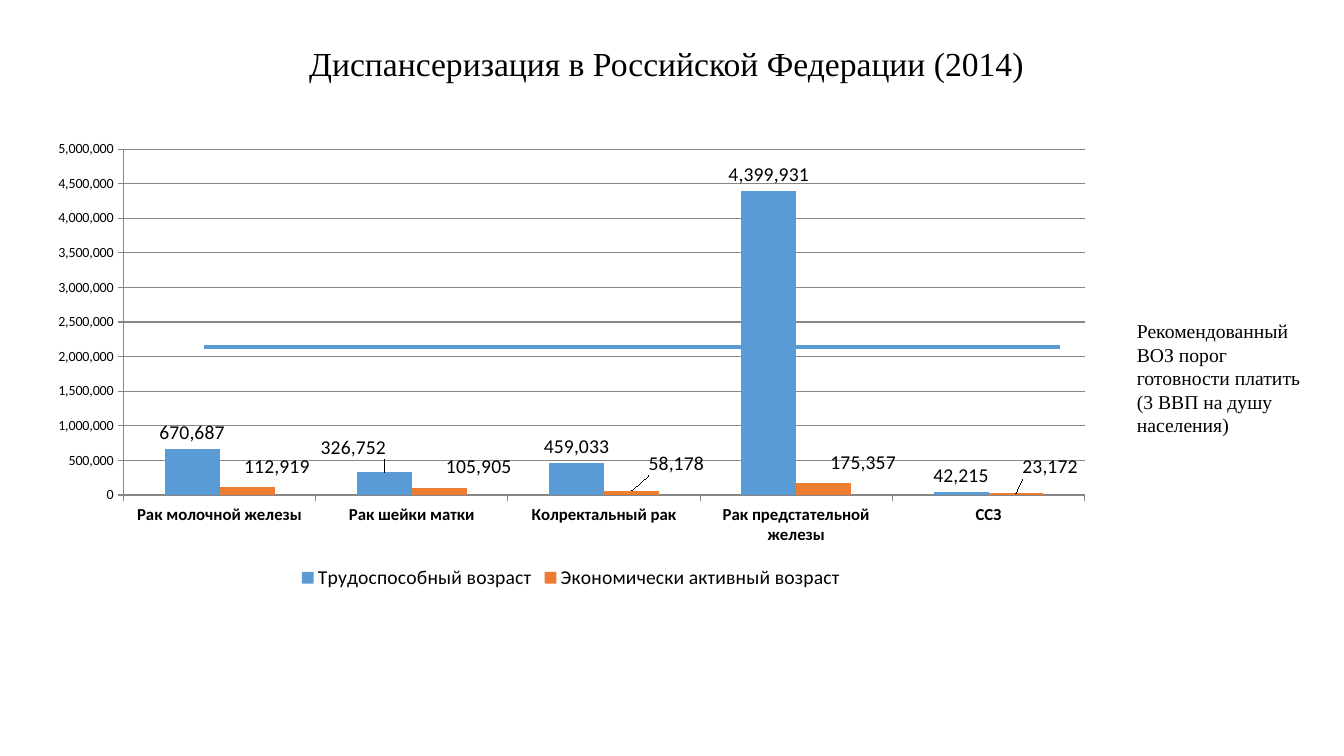
import pptx
import pptx.chart.data
import pptx.dml.color
import pptx.enum.chart
import pptx.enum.shapes
import pptx.enum.text
import pptx.oxml
import pptx.oxml.ns
import pptx.util
import lxml.etree

EMU_PER_PX = 914400 / 100.8
CHART_BOX = (37, 132, 1068, 462)
PLOT_BOX = (86, 17, 961, 346)
NUMBER_FORMAT = "#,##0"
CATEGORIES = [
    "Рак молочной железы",
    "Рак шейки матки",
    "Колректальный рак",
    "Рак предстательной железы",
    "ССЗ",
]
SERIES = [
    {
        "name": "Трудоспособный возраст",
        "values": [670687, 326752, 459033, 4399931, 42215],
        "color": "5B9BD5",
        "label_shifts": {1: (-31, -9)},
    },
    {
        "name": "Экономически активный возраст",
        "values": [112919, 105905, 58178, 175357, 23172],
        "color": "ED7D31",
        "label_shifts": {
            0: (30, -4), 1: (39, -5), 2: (45, -11), 3: (40, -4), 4: (34, -10),
        },
    },
]


def px(length):
    return pptx.util.Emu(round(length * EMU_PER_PX))


def color(hex_string):
    return pptx.dml.color.RGBColor.from_string(hex_string)


def set_attributes(target, values):
    for name, value in values.items():
        setattr(target, name, value)


def set_font(font, size, name="Calibri", bold=False):
    set_attributes(font, {"size": pptx.util.Pt(size), "name": name, "bold": bold})
    font.color.rgb = color("000000")


def set_line(line, hex_string, width):
    line.color.rgb = color(hex_string)
    line.width = pptx.util.Pt(width)


def make_layout(values):
    namespace = pptx.oxml.ns.nsdecls("c")
    entries = "".join(f'<c:{tag} val="{value}"/>' for tag, value in values.items())
    return pptx.oxml.parse_xml(
        f"<c:layout {namespace}><c:manualLayout>{entries}</c:manualLayout></c:layout>"
    )


def place_plot(chart):
    left, top, width, height = PLOT_BOX
    chart_width, chart_height = CHART_BOX[2:]
    layout = make_layout({
        "layoutTarget": "inner",
        "xMode": "edge",
        "yMode": "edge",
        "x": round(left / chart_width, 3),
        "y": round(top / chart_height, 3),
        "w": round(width / chart_width, 3),
        "h": round(height / chart_height, 3),
    })
    plot_area = chart._chartSpace.chart.plotArea
    for existing in plot_area.xpath("./c:layout"):
        plot_area.remove(existing)
    plot_area.insert(0, layout)


def format_labels(series, label_shifts):
    labels = series.data_labels
    position = pptx.enum.chart.XL_LABEL_POSITION.OUTSIDE_END
    set_attributes(labels, {
        "show_value": True,
        "number_format": NUMBER_FORMAT,
        "number_format_is_linked": False,
        "position": position,
    })
    set_font(labels.font, 14)
    for index, (right, down) in label_shifts.items():
        label = series.points[index].data_label
        set_font(label.font, 14)
        label.position = position
        layout = make_layout({
            "x": round(right / CHART_BOX[2], 3),
            "y": round(down / CHART_BOX[3], 3),
        })
        label_index = series._element.xpath(f'.//c:dLbl/c:idx[@val="{index}"]')[0]
        label_index.addnext(layout)


def format_axes(chart):
    category_axis, value_axis = chart.category_axis, chart.value_axis
    for axis in (category_axis, value_axis):
        axis.major_tick_mark = pptx.enum.chart.XL_TICK_MARK.OUTSIDE
        set_line(axis.format.line, "878787", 0.75)
    set_font(category_axis.tick_labels.font, 12, bold=True)
    set_font(value_axis.tick_labels.font, 10)
    set_attributes(value_axis, {
        "minimum_scale": 0,
        "maximum_scale": 5000000,
        "major_unit": 500000,
        "has_major_gridlines": True,
    })
    set_attributes(value_axis.tick_labels, {
        "number_format": NUMBER_FORMAT,
        "number_format_is_linked": False,
    })
    set_line(value_axis.major_gridlines.format.line, "878787", 0.75)


def add_column_chart(slide):
    data = pptx.chart.data.CategoryChartData(number_format=NUMBER_FORMAT)
    data.categories = CATEGORIES
    for entry in SERIES:
        data.add_series(entry["name"], entry["values"])
    chart = slide.shapes.add_chart(
        pptx.enum.chart.XL_CHART_TYPE.COLUMN_CLUSTERED, *map(px, CHART_BOX), data
    ).chart
    set_font(chart.font, 10)
    set_attributes(chart, {"has_title": False, "has_legend": True})
    set_attributes(chart.legend, {
        "position": pptx.enum.chart.XL_LEGEND_POSITION.BOTTOM,
        "include_in_layout": False,
    })
    set_font(chart.legend.font, 14)
    plot = chart.plots[0]
    set_attributes(plot, {"gap_width": 150, "overlap": 0, "vary_by_categories": False})
    for series, entry in zip(plot.series, SERIES):
        series.format.fill.solid()
        series.format.fill.fore_color.rgb = color(entry["color"])
        format_labels(series, entry["label_shifts"])
    format_axes(chart)
    place_plot(chart)


def add_threshold_line(slide, left, right, height):
    connector = slide.shapes.add_connector(
        pptx.enum.shapes.MSO_CONNECTOR.STRAIGHT,
        px(left), px(height), px(right), px(height),
    )
    set_line(connector.line, "5B9BD5", 3.25)
    lxml.etree.SubElement(
        connector._element.spPr, pptx.oxml.ns.qn("a:effectLst")
    )


def add_text(slide, box, text, size, frame_format, alignment):
    frame = slide.shapes.add_textbox(*map(px, box)).text_frame
    set_attributes(frame, {"word_wrap": True, **frame_format})
    paragraph = frame.paragraphs[0]
    paragraph.alignment = alignment
    run = paragraph.add_run()
    run.text = text
    set_font(run.font, size, "Times New Roman")


def main():
    presentation = pptx.Presentation()
    set_attributes(presentation, {"slide_width": px(1344), "slide_height": px(756)})
    slide = presentation.slides.add_slide(presentation.slide_layouts[6])
    align = pptx.enum.text.PP_ALIGN
    add_column_chart(slide)
    add_threshold_line(slide, 204, 1060, 347)
    add_text(
        slide, (1127, 314, 190, 129),
        "Рекомендованный ВОЗ порог готовности платить (3 ВВП на душу населения)",
        14, {"auto_size": pptx.enum.text.MSO_AUTO_SIZE.SHAPE_TO_FIT_TEXT}, align.LEFT,
    )
    add_text(
        slide, (16, 0, 1301, 126), "Диспансеризация в Российской Федерации (2014)",
        24, {"vertical_anchor": pptx.enum.text.MSO_ANCHOR.MIDDLE}, align.CENTER,
    )
    presentation.save("out.pptx")


if __name__ == "__main__":
    main()
